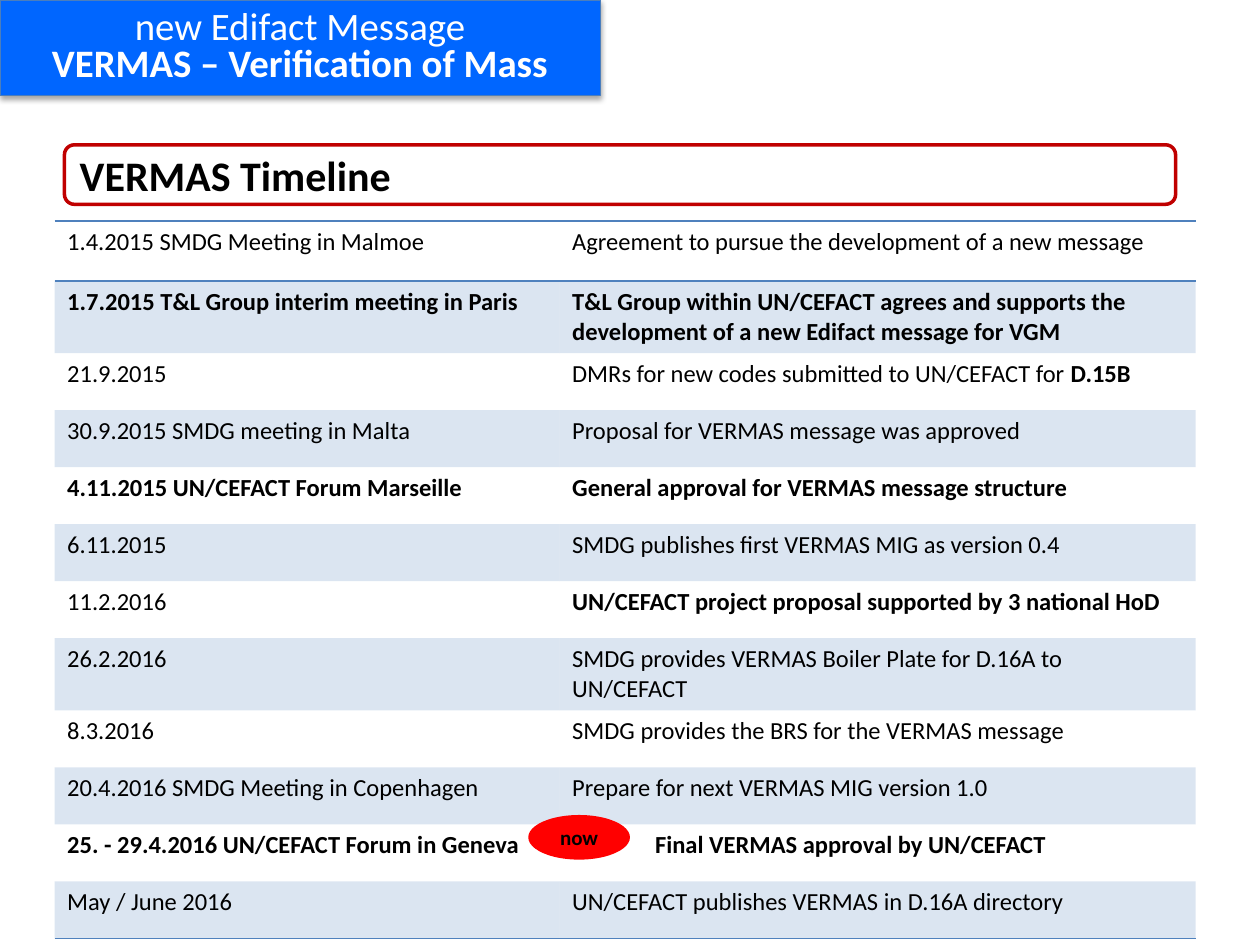
from lxml import etree
from pptx import Presentation
from pptx import util as u
from pptx.dml.color import RGBColor
from pptx.enum import shapes, text
from pptx.oxml import parse_xml
from pptx.oxml.ns import nsdecls, qn

BLACK = RGBColor(0x00, 0x00, 0x00)
WHITE = RGBColor(0xFF, 0xFF, 0xFF)
RED = RGBColor(0xFF, 0x00, 0x00)
DARK_RED = RGBColor(0xC0, 0x00, 0x00)
BANNER_BLUE = RGBColor(0x00, 0x66, 0xFF)
BANNER_EDGE = RGBColor(0x4B, 0x7E, 0xBC)
ACCENT = RGBColor(0x4F, 0x81, 0xBD)

FONT = "Calibri"
PLAIN_TABLE_STYLE = "{2D5ABB26-0587-4C30-8999-92F81FD0307C}"

# Each row: event, outcome, event is bold, outcome is bold
TIMELINE = [
    ("1.4.2015 SMDG Meeting in Malmoe",
     "Agreement to pursue the development of a new message", False, False),
    ("1.7.2015 T&L Group interim meeting in Paris",
     "T&L Group within UN/CEFACT agrees and supports the development of a new "
     "Edifact message for VGM", True, True),
    ("21.9.2015", "DMRs for new codes submitted to UN/CEFACT for ", False, False),
    ("30.9.2015 SMDG meeting in Malta",
     "Proposal for VERMAS message was approved", False, False),
    ("4.11.2015 UN/CEFACT Forum Marseille",
     "General approval for VERMAS message structure", True, True),
    ("6.11.2015", "SMDG publishes first VERMAS MIG as version 0.4", False, False),
    ("11.2.2016", "UN/CEFACT project proposal supported by 3 national HoD", False, True),
    ("26.2.2016", "SMDG provides VERMAS Boiler Plate for D.16A to UN/CEFACT", False, False),
    ("8.3.2016", "SMDG provides the BRS for the VERMAS message", False, False),
    ("20.4.2016 SMDG Meeting in Copenhagen",
     "Prepare for next VERMAS MIG version 1.0", False, False),
    ("25. - 29.4.2016 UN/CEFACT Forum in Geneva",
     "Final VERMAS approval by UN/CEFACT", True, True),
    ("May / June 2016", "UN/CEFACT publishes VERMAS in D.16A directory", False, False),
]
DMR_ROW, NOW_ROW = 2, 10


class SlideBuilder:
    def __init__(self, slide):
        self.slide = slide

    def format_font(self, font, size, color=BLACK, bold=False):
        font.name = FONT
        font.size = u.Pt(size)
        font.color.rgb = color
        font.bold = bold

    def banner(self, first_line, second_line, left, top, width, height):
        title = self.slide.shapes.title
        title.left, title.top = u.Cm(left), u.Cm(top)
        title.width, title.height = u.Cm(width), u.Cm(height)
        title.fill.solid()
        title.fill.fore_color.rgb = BANNER_BLUE
        title.line.color.rgb = BANNER_EDGE
        title.line.width = u.Pt(0.75)
        title._element.spPr.append(parse_xml(
            f'<a:effectLst {nsdecls("a")}><a:outerShdw blurRad="40000" dist="23000" '
            'dir="5400000" rotWithShape="0"><a:srgbClr val="000000">'
            '<a:alpha val="35000"/></a:srgbClr></a:outerShdw></a:effectLst>'))
        frame = title.text_frame
        frame.auto_size = text.MSO_AUTO_SIZE.NONE
        frame.vertical_anchor = text.MSO_ANCHOR.MIDDLE
        paragraph = frame.paragraphs[0]
        paragraph.alignment = text.PP_ALIGN.CENTER
        paragraph.line_spacing = 0.8
        paragraph.add_run().text = first_line
        paragraph.add_line_break()
        paragraph.add_run().text = second_line
        for run, bold in zip(paragraph.runs, (False, True)):
            self.format_font(run.font, 22.2, WHITE, bold)

    def label(self, kind, wording, left, top, width, height, fill, size, alignment, line=None):
        shape = self.slide.shapes.add_shape(
            kind, u.Cm(left), u.Cm(top), u.Cm(width), u.Cm(height))
        shape.shadow.inherit = False
        shape.fill.solid()
        shape.fill.fore_color.rgb = fill
        if line is None:
            shape.line.fill.background()
        else:
            shape.line.color.rgb = line
            shape.line.width = u.Pt(2)
        shape.text_frame.vertical_anchor = text.MSO_ANCHOR.MIDDLE
        paragraph = shape.text_frame.paragraphs[0]
        paragraph.text = wording
        paragraph.alignment = alignment
        self.format_font(paragraph.font, size, bold=True)

    def cell_style(self, cell, shaded, edges):
        if shaded:
            cell.fill.solid()
            cell.fill.fore_color.rgb = ACCENT
            color = cell._tc.tcPr.find(".//" + qn("a:srgbClr"))
            etree.SubElement(color, qn("a:alpha")).set("val", "20000")
        else:
            cell.fill.background()
        # Borders come before the fill in the cell properties
        for position, edge in enumerate(edges):
            cell._tc.tcPr.insert(position, parse_xml(
                f'<a:{edge} {nsdecls("a")} w="12700"><a:solidFill>'
                f'<a:srgbClr val="{ACCENT}"/></a:solidFill></a:{edge}>'))

    def timeline_table(self, rows, left, top, widths, first_height, height):
        frame = self.slide.shapes.add_table(
            len(rows), len(widths), u.Cm(left), u.Cm(top), u.Cm(sum(widths)),
            u.Cm(first_height + height * (len(rows) - 1)))
        table = frame.table
        table.first_row = table.horz_banding = False
        table._tbl.tblPr.find(qn("a:tableStyleId")).text = PLAIN_TABLE_STYLE
        for column, width in zip(table.columns, widths):
            column.width = u.Cm(width)
        borders = {0: ("lnT", "lnB"), len(rows) - 1: ("lnB",)}
        for index, (event, outcome, event_bold, outcome_bold) in enumerate(rows):
            table.rows[index].height = u.Cm(height if index else first_height)
            entries = ((event, event_bold), (outcome, outcome_bold))
            for cell, (wording, bold) in zip(table.rows[index].cells, entries):
                cell.text = wording
                self.format_font(cell.text_frame.paragraphs[0].font, 14, bold=bold)
                self.cell_style(cell, index % 2 == 1, borders.get(index, ()))
        return table


def main():
    presentation = Presentation()
    presentation.slide_width, presentation.slide_height = u.Cm(25.4), u.Cm(19.05)
    title_only = presentation.slide_layouts[5]
    builder = SlideBuilder(presentation.slides.add_slide(title_only))

    # Banner and heading
    builder.banner("new Edifact Message", "VERMAS – Verification of Mass", 0, 0, 12.1, 1.93)
    builder.label(shapes.MSO_SHAPE.ROUNDED_RECTANGLE, "VERMAS Timeline",
                  1.3, 2.92, 22.4, 1.2, WHITE, 24, text.PP_ALIGN.LEFT, DARK_RED)

    # Timeline
    table = builder.timeline_table(TIMELINE, 1.1, 4.46, (10.18, 12.82), 1.2, 1.15)
    release = table.cell(DMR_ROW, 1).text_frame.paragraphs[0].add_run()
    release.text = "D.15B"
    release.font.bold = True

    # Marker for the current event, with its outcome indented past it
    approval = table.cell(NOW_ROW, 1).text_frame.paragraphs[0]
    approval._p.get_or_add_pPr().set("marL", str(u.Cm(1.67)))
    builder.label(shapes.MSO_SHAPE.OVAL, "now", 10.65, 16.43, 2.05, 0.9,
                  RED, 12, text.PP_ALIGN.CENTER)

    presentation.save("out.pptx")


if __name__ == "__main__":
    main()
